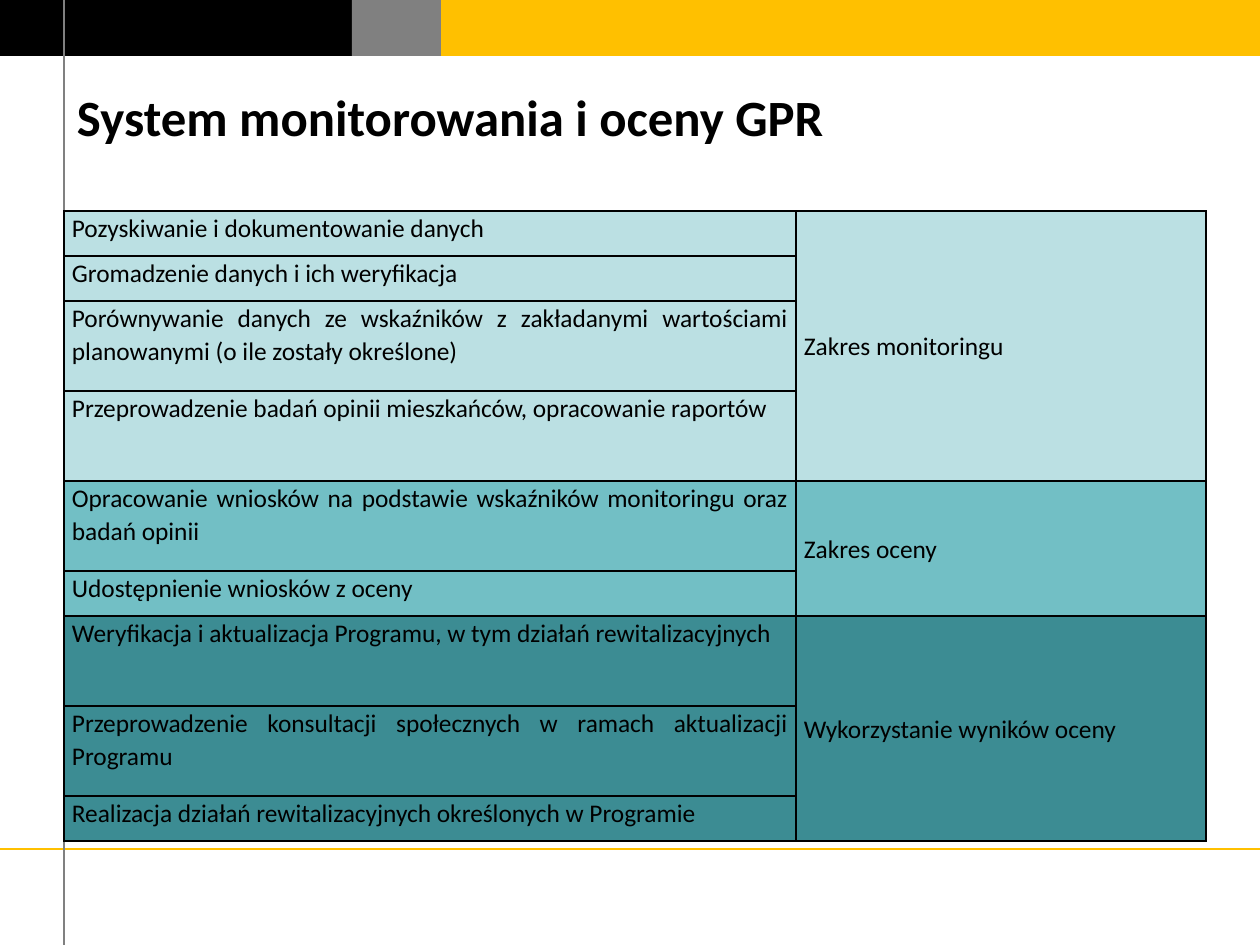
from lxml import etree
from pptx import Presentation
from pptx.dml.color import RGBColor
from pptx.enum.shapes import MSO_CONNECTOR, MSO_SHAPE
from pptx.enum.text import MSO_ANCHOR, MSO_AUTO_SIZE, PP_ALIGN
from pptx.oxml.ns import qn
from pptx.util import Pt

STRAIGHT = MSO_CONNECTOR.STRAIGHT
RECTANGLE = MSO_SHAPE.RECTANGLE
TOP, MIDDLE = MSO_ANCHOR.TOP, MSO_ANCHOR.MIDDLE
NO_AUTOFIT = MSO_AUTO_SIZE.NONE
JUSTIFY = PP_ALIGN.JUSTIFY
TITLE_ONLY = 5

WIDTH, HEIGHT = 1260, 945
BAND_HEIGHT = 56
MARGIN_X, FOOT_Y = 64, 849
COLUMNS = (732, 410)
ROW_UNIT = 45
BLACK, GREY, AMBER = "000000", "808080", "FFC000"

# Each stage: name, fill, and its steps with their height in row units
STAGES = [
    ("Zakres monitoringu", "BBE0E3", [
        ("Pozyskiwanie i dokumentowanie danych", 1),
        ("Gromadzenie danych i ich weryfikacja", 1),
        ("Porównywanie danych ze wskaźników z zakładanymi wartościami "
         "planowanymi (o ile zostały określone)", 2),
        ("Przeprowadzenie badań opinii mieszkańców, opracowanie raportów", 2),
    ]),
    ("Zakres oceny", "72BFC5", [
        ("Opracowanie wniosków na podstawie wskaźników monitoringu oraz "
         "badań opinii", 2),
        ("Udostępnienie wniosków z oceny", 1),
    ]),
    ("Wykorzystanie wyników oceny", "3C8C93", [
        ("Weryfikacja i aktualizacja Programu, w tym działań "
         "rewitalizacyjnych", 2),
        ("Przeprowadzenie konsultacji społecznych w ramach aktualizacji "
         "Programu", 2),
        ("Realizacja działań rewitalizacyjnych określonych w Programie", 1),
    ]),
]


def px(n):
    return n * 8000


def rgb(value):
    return RGBColor.from_string(value)


class Deck:
    font = "Calibri"

    def __init__(self):
        self.prs = Presentation()
        self.prs.slide_width, self.prs.slide_height = px(WIDTH), px(HEIGHT)
        self.s = self.prs.slides.add_slide(self.prs.slide_layouts[TITLE_ONLY])

    def text(self, tf, text, size=16, bold=False, color=BLACK, spacing=1.0):
        p = tf.paragraphs[0]
        p.alignment, p.line_spacing = JUSTIFY, spacing
        r = p.add_run()
        r.text = text
        r.font.name, r.font.size, r.font.bold = self.font, Pt(size), bold
        r.font.color.rgb = rgb(color)

    def title(self, text, x, y, w, h):
        sp = self.s.shapes.title
        sp.left, sp.top, sp.width, sp.height = map(px, (x, y, w, h))
        tf = sp.text_frame
        tf.auto_size, tf.vertical_anchor, tf.word_wrap = NO_AUTOFIT, MIDDLE, True
        tf.margin_left = tf.margin_right = px(13)
        tf.margin_top = tf.margin_bottom = px(7)
        self.text(tf, text, size=32, bold=True)

    def rect(self, x, y, w, h, fill):
        sp = self.s.shapes.add_shape(RECTANGLE, *map(px, (x, y, w, h)))
        sp.shadow.inherit = False
        sp.fill.solid()
        sp.fill.fore_color.rgb = rgb(fill)
        sp.line.fill.background()

    def line(self, x1, y1, x2, y2, color):
        c = self.s.shapes.add_connector(STRAIGHT, *map(px, (x1, y1, x2, y2)))
        c.line.color.rgb = rgb(color)
        c.line.width = Pt(0.75)
        etree.SubElement(c._element.spPr, qn("a:effectLst"))

    def table(self, x, y, columns, row_heights):
        frame = self.s.shapes.add_table(
            len(row_heights), len(columns),
            *map(px, (x, y, sum(columns), sum(row_heights))))
        table = frame.table
        table.first_row = table.horz_banding = False
        for column, w in zip(table.columns, columns):
            column.width = px(w)
        for row, h in zip(table.rows, row_heights):
            row.height = px(h)
        return table

    def style_cell(self, cell, fill, anchor):
        cell.fill.solid()
        cell.fill.fore_color.rgb = rgb(fill)
        cell.vertical_anchor = anchor
        cell.margin_left = cell.margin_right = px(8)
        cell.margin_top = cell.margin_bottom = 0
        tc_pr = cell._tc.get_or_add_tcPr()
        for i, side in enumerate(("a:lnL", "a:lnR", "a:lnT", "a:lnB")):
            ln = etree.Element(qn(side), w=str(Pt(1)))
            solid = etree.SubElement(ln, qn("a:solidFill"))
            etree.SubElement(solid, qn("a:srgbClr"), val=BLACK)
            tc_pr.insert(i, ln)

    def stages(self, x, y):
        """Draw the steps, with each stage name merged beside its own steps."""
        heights = [units * ROW_UNIT for _, _, steps in STAGES
                   for _, units in steps]
        table = self.table(x, y, COLUMNS, heights)
        first = 0
        for name, fill, steps in STAGES:
            for row, (step, _) in enumerate(steps, first):
                self.style_cell(table.cell(row, 0), fill, TOP)
                self.style_cell(table.cell(row, 1), fill, MIDDLE)
                self.text(table.cell(row, 0).text_frame, step, spacing=1.07)
            stage = table.cell(first, 1)
            stage.merge(table.cell(first + len(steps) - 1, 1))
            self.text(stage.text_frame, name, spacing=1.07)
            first += len(steps)


def main():
    deck = Deck()
    deck.rect(0, 0, 352, BAND_HEIGHT, BLACK)
    deck.rect(441, 0, WIDTH - 441, BAND_HEIGHT, AMBER)
    deck.line(0, FOOT_Y, WIDTH, FOOT_Y, AMBER)
    deck.line(MARGIN_X, HEIGHT, MARGIN_X, 0, GREY)
    deck.rect(352, 0, 89, BAND_HEIGHT, GREY)
    deck.title("System monitorowania i oceny GPR", MARGIN_X, 56, 1134, 120)
    deck.stages(MARGIN_X, 211)
    deck.prs.save("out.pptx")


if __name__ == "__main__":
    main()
